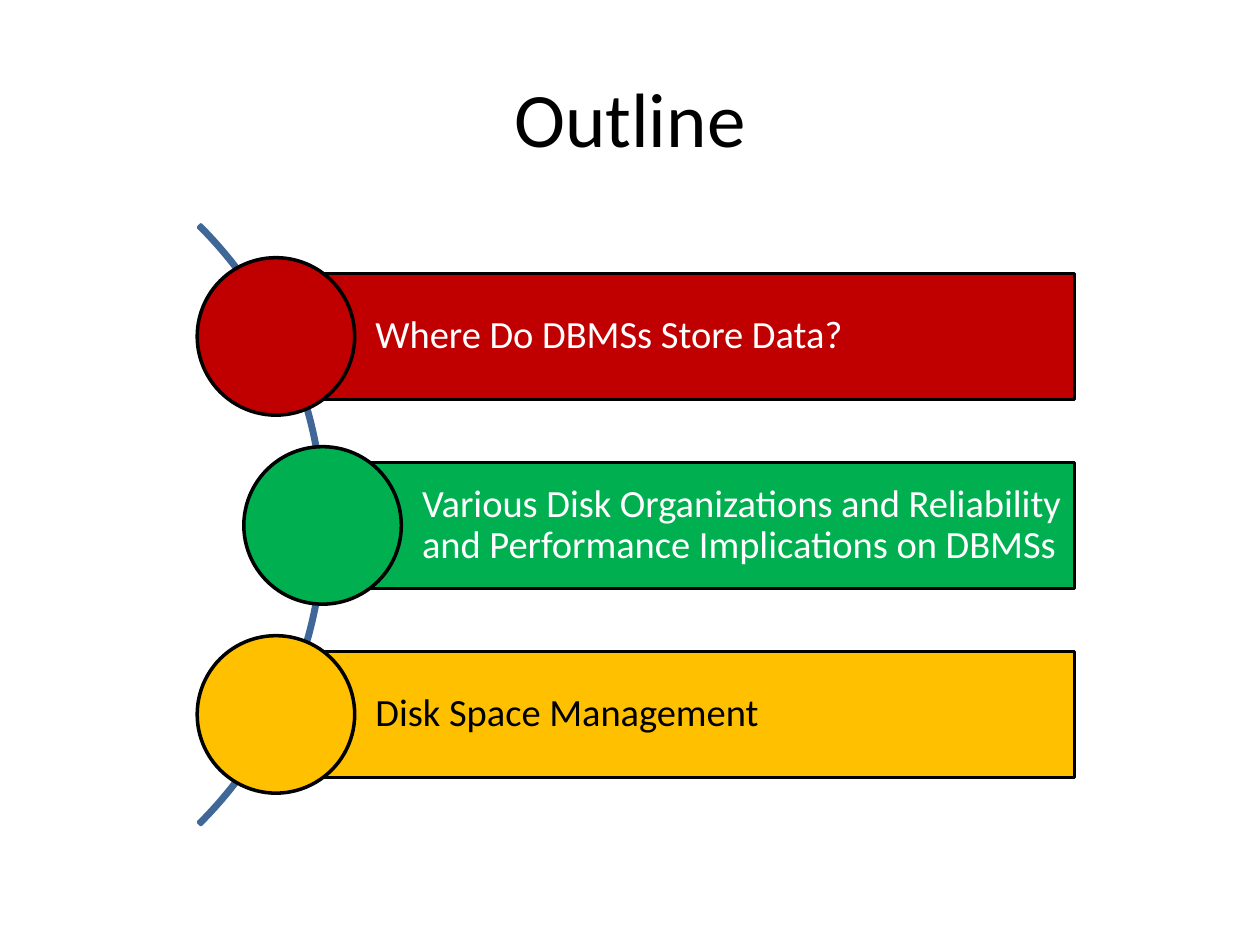
from pptx import Presentation
from pptx.dml.color import RGBColor
from pptx.enum.shapes import MSO_SHAPE as Preset
from pptx.enum.text import MSO_ANCHOR as Anchor, PP_ALIGN as Align
from pptx.util import Inches, Pt

BLACK = RGBColor(0x00, 0x00, 0x00)
WHITE = RGBColor(0xFF, 0xFF, 0xFF)
RED = RGBColor(0xC0, 0x00, 0x00)
GREEN = RGBColor(0x00, 0xB0, 0x50)
AMBER = RGBColor(0xFF, 0xC0, 0x00)
ARC_BLUE = RGBColor(0x3F, 0x67, 0x97)

FONT = "Calibri"
BAR_HEIGHT = 1
CIRCLE_SIZE = 1.25
ROW_PITCH = 1.5

# Text, fill, text colour, and how far the row follows the arc to the right
TOPICS = [
    ("Where Do DBMSs Store Data?", RED, WHITE, 0),
    ("Various Disk Organizations and Reliability and Performance "
     "Implications on DBMSs", GREEN, WHITE, 0.37),
    ("Disk Space Management", AMBER, BLACK, 0),
]


def add_outlined(page, preset, box, line_color, fill=None):
    shape = page.shapes.add_shape(preset, *map(Inches, box))
    shape.shadow.inherit = False
    if fill is None:
        shape.fill.background()
    else:
        shape.fill.solid()
        shape.fill.fore_color.rgb = fill
    shape.line.color.rgb = line_color
    shape.line.width = Pt(2)
    return shape


def write_text(frame, text, size, color, align):
    frame.word_wrap = True
    frame.vertical_anchor = Anchor.MIDDLE
    para = frame.paragraphs[0]
    para.text = text
    para.alignment = align
    para.font.name = FONT
    para.font.size = Pt(size)
    para.font.color.rgb = color
    return para


def add_title(page, box, text):
    title = page.shapes.add_textbox(*map(Inches, box))
    write_text(title.text_frame, text, 44, BLACK, Align.CENTER)


def add_arc(page, box):
    arc = add_outlined(page, Preset.BLOCK_ARC, box, ARC_BLUE)
    # Angles from 315 to 45 degrees, in units of 100000/60000 degree
    arc.adjustments[0] = 189
    arc.adjustments[1] = 27
    arc.adjustments[2] = 0.004


def add_topic(page, box, text, fill, text_color):
    left, top, width, height = box

    # Bar with its label
    bar = add_outlined(page, Preset.RECTANGLE, box, BLACK, fill)
    frame = bar.text_frame
    frame.margin_left = Inches(0.79)
    frame.margin_top = frame.margin_right = frame.margin_bottom = Inches(0.06)
    para = write_text(frame, text, 22, text_color, Align.LEFT)
    para.line_spacing = 0.9

    # Circle centred on the bar's left edge
    circle_box = (left - CIRCLE_SIZE / 2, top + (height - CIRCLE_SIZE) / 2,
                  CIRCLE_SIZE, CIRCLE_SIZE)
    add_outlined(page, Preset.OVAL, circle_box, BLACK, fill)


def add_topic_list(page, box):
    left, top, width = box
    for row, (text, fill, text_color, shift) in enumerate(TOPICS):
        bar_box = (left + shift, top + row * ROW_PITCH,
                   width - shift, BAR_HEIGHT)
        add_topic(page, bar_box, text, fill, text_color)


def main():
    deck = Presentation()
    deck.slide_width, deck.slide_height = Inches(10), Inches(7.5)
    page = deck.slides.add_slide(deck.slide_layouts[6])
    add_title(page, (0.5, 0.3, 9, 1.25), "Outline")
    add_arc(page, (-4.15, 0.8, 6.73, 6.73))
    add_topic_list(page, (2.19, 2.17, 6.34))
    deck.save("out.pptx")


if __name__ == "__main__":
    main()
